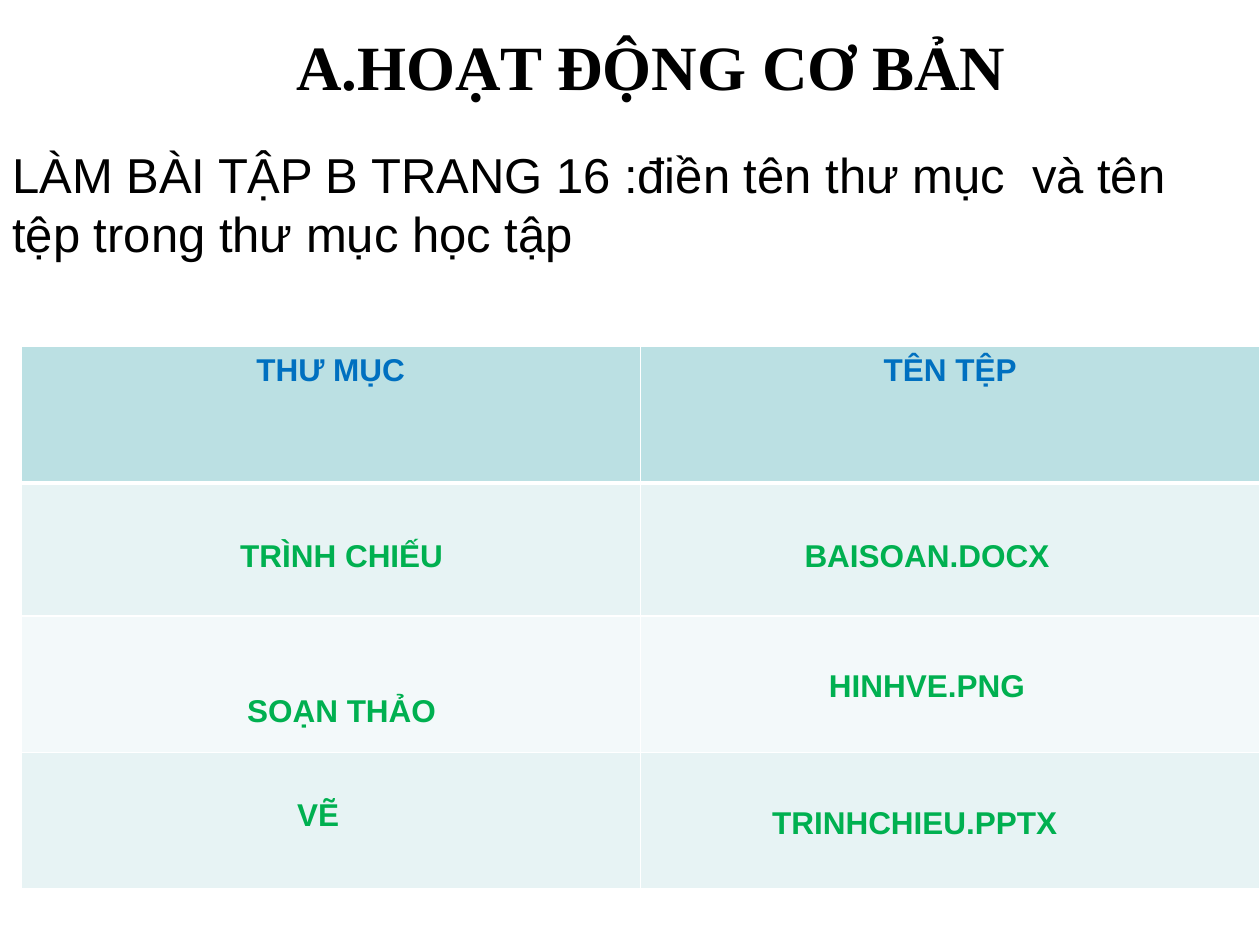
from dataclasses import dataclass

from lxml import etree
from pptx import Presentation, util as u
from pptx.dml.color import RGBColor
from pptx.enum import text
from pptx.oxml.ns import qn

COLORS = {"ink": "000000", "header": "0070C0", "answer": "00B050", "border": "FFFFFF",
          "head_fill": "BBE0E3", "band": "E7F3F4", "band_light": "F3F9FA"}
HEADERS = ("THƯ MỤC", "TÊN TỆP")
ROW_FILLS = ("head_fill", "band", "band_light", "band")
ROW_HEIGHTS = (78, 76, 78, 78)
COLUMN_WIDTH = 354


@dataclass
class Style:
    size: float
    color: str
    bold: bool = True
    font: str = "Arial"
    align: text.PP_ALIGN = text.PP_ALIGN.CENTER


@dataclass
class Label:
    wording: str
    left: float
    top: float
    width: float = 243.5
    height: float = 30


TITLE_STYLE = Style(36, "ink", font="Times New Roman")
TASK_STYLE = Style(28, "ink", bold=False, align=text.PP_ALIGN.LEFT)
HEADER_STYLE = Style(18, "header")
ANSWER_STYLE = Style(18, "answer")

TITLE = Label("A.HOẠT ĐỘNG CƠ BẢN", 48, 12, 648, 51)
TASK = Label("LÀM BÀI TẬP B TRANG 16 :điền tên thư mục  và tên tệp trong thư mục học tập",
             0, 79, 714, 75)
ANSWERS = (
    Label("TRÌNH CHIẾU", 73.5, 302),
    Label("SOẠN THẢO", 73.5, 390.5),
    Label("VẼ", 60, 450),
    Label("BAISOAN.DOCX", 408, 302),
    Label("HINHVE.PNG", 408, 376.5),
    Label("TRINHCHIEU.PPTX", 401, 454.5),
)


def write(tf, wording: str, style: Style) -> None:
    """Write one styled run into the first paragraph."""
    p = tf.paragraphs[0]
    p.alignment = style.align
    r = p.add_run()
    r.text = wording
    r.font.name = style.font
    r.font.size = u.Pt(style.size)
    r.font.bold = style.bold
    r.font.color.rgb = RGBColor.from_string(COLORS[style.color])


def add_label(s, label: Label, style: Style, anchor=text.MSO_ANCHOR.TOP) -> None:
    """Add a wrapping text box."""
    box = (label.left, label.top, label.width, label.height)
    sp = s.shapes.add_textbox(*map(u.Pt, box))
    tf = sp.text_frame
    tf.word_wrap = True
    tf.vertical_anchor = anchor
    write(tf, label.wording, style)


def set_border(cell, side: str, width: float) -> None:
    """Draw one solid cell border."""
    ln = etree.SubElement(cell._tc.get_or_add_tcPr(), qn(f"a:ln{side}"), w=str(u.Pt(width)))
    fill = etree.SubElement(ln, qn("a:solidFill"))
    etree.SubElement(fill, qn("a:srgbClr"), val=COLORS["border"])


def add_answer_table(s) -> None:
    """Add the folder and file table with its header row."""
    rows, cols = len(ROW_HEIGHTS), len(HEADERS)
    frame = s.shapes.add_table(rows, cols, u.Pt(12), u.Pt(198),
                               u.Pt(cols * COLUMN_WIDTH), u.Pt(sum(ROW_HEIGHTS)))
    table = frame.table
    for column in table.columns:
        column.width = u.Pt(COLUMN_WIDTH)
    for i, (height, fill) in enumerate(zip(ROW_HEIGHTS, ROW_FILLS)):
        table.rows[i].height = u.Pt(height)
        for j, header in enumerate(HEADERS):
            cell = table.cell(i, j)
            for side in "LRTB":
                set_border(cell, side, 3 if (i, side) in ((0, "B"), (1, "T")) else 1)
            cell.fill.solid()
            cell.fill.fore_color.rgb = RGBColor.from_string(COLORS[fill])
            if i == 0:
                write(cell.text_frame, header, HEADER_STYLE)


def main() -> None:
    """Build and save the slide."""
    prs = Presentation()
    prs.slide_width, prs.slide_height = u.Pt(720), u.Pt(540)
    s = prs.slides.add_slide(prs.slide_layouts[6])
    add_label(s, TITLE, TITLE_STYLE)
    add_label(s, TASK, TASK_STYLE)
    add_answer_table(s)
    for answer in ANSWERS:
        add_label(s, answer, ANSWER_STYLE, text.MSO_ANCHOR.MIDDLE)
    prs.save("out.pptx")


if __name__ == "__main__":
    main()
